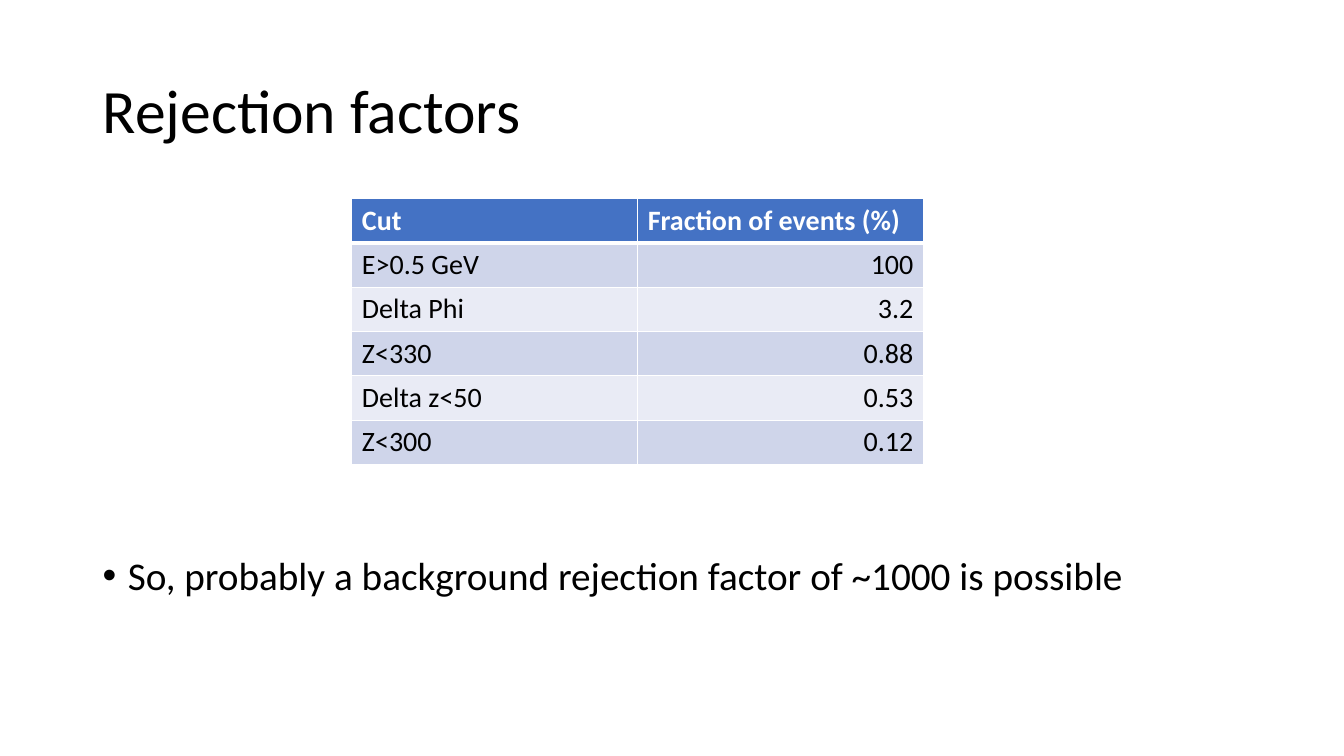
from dataclasses import dataclass

from lxml.etree import SubElement
from pptx import Presentation
from pptx.dml.color import RGBColor
from pptx.enum.text import MSO_ANCHOR, PP_ALIGN
from pptx.oxml import parse_xml
from pptx.oxml.ns import qn
from pptx.util import Inches, Pt

FONT = "Calibri"
COLORS = {
    "ink": "000000",
    "white": "FFFFFF",
    "head": "4472C4",
    "odd": "CFD5EA",
    "even": "E9EBF5",
}
NS = "http://schemas.openxmlformats.org/drawingml/2006/main"


@dataclass
class Cut:
    name: str
    share: str


@dataclass
class Box:
    left: float
    top: float
    width: float
    height: float


HEAD = Cut("Cut", "Fraction of events (%)")
CUTS = [
    Cut("E>0.5 GeV", "100"),
    Cut("Delta Phi", "3.2"),
    Cut("Z<330", "0.88"),
    Cut("Delta z<50", "0.53"),
    Cut("Z<300", "0.12"),
]


def write(frame, text: str, *, size: float, color: str = "ink",
          bold: bool = False, align=PP_ALIGN.LEFT, anchor=MSO_ANCHOR.TOP,
          leading: float = 1.0, before: float = 0, bullet: str = ""):
    frame.word_wrap = True
    frame.vertical_anchor = anchor
    para = frame.paragraphs[0]
    para.alignment = align
    para.line_spacing = leading
    para.space_before = Pt(before)
    if bullet:
        props = para._p.get_or_add_pPr()
        props.set("marL", str(Inches(0.25)))
        props.set("indent", str(-Inches(0.25)))
        SubElement(props, qn("a:buFont"), typeface="Arial")
        SubElement(props, qn("a:buChar"), char=bullet)
    run = para.add_run()
    run.text = text
    font = run.font
    font.name = FONT
    font.size = Pt(size)
    font.bold = bold
    font.color.rgb = RGBColor.from_string(COLORS[color])


def place(slide, box: Box, text: str, **style) -> None:
    shape = slide.shapes.add_textbox(
        Inches(box.left), Inches(box.top), Inches(box.width), Inches(box.height))
    write(shape.text_frame, text, **style)


def border(cell, base: float) -> None:
    props = cell._tc.get_or_add_tcPr()
    widths = {"lnL": 1, "lnR": 1, "lnT": 1, "lnB": base}
    for spot, (side, width) in enumerate(widths.items()):
        props.insert(spot, parse_xml(
            f'<a:{side} xmlns:a="{NS}" w="{Pt(width)}"><a:solidFill>'
            f'<a:srgbClr val="{COLORS["white"]}"/></a:solidFill></a:{side}>'))


def tabulate(slide, box: Box, cuts: list[Cut]) -> None:
    rows = [HEAD, *cuts]
    table = slide.shapes.add_table(
        len(rows), 2, Inches(box.left), Inches(box.top),
        Inches(box.width), Inches(box.height)).table
    for row, cut in enumerate(rows):
        head = row == 0
        fill = "head" if head else "odd" if row % 2 else "even"
        for col, text in enumerate((cut.name, cut.share)):
            cell = table.cell(row, col)
            cell.fill.solid()
            cell.fill.fore_color.rgb = RGBColor.from_string(COLORS[fill])
            border(cell, 3 if head else 1)
            right = col == 1 and not head
            write(cell.text_frame, text, size=20, bold=head,
                  color="white" if head else "ink",
                  align=PP_ALIGN.RIGHT if right else PP_ALIGN.LEFT)


def main() -> None:
    deck = Presentation()
    deck.slide_width = Inches(13.33)
    deck.slide_height = Inches(7.5)
    slide = deck.slides.add_slide(deck.slide_layouts[6])
    place(slide, Box(0.92, 0.4, 11.5, 1.45), "Rejection factors",
          size=44, anchor=MSO_ANCHOR.MIDDLE, leading=0.9)
    place(slide, Box(0.92, 5.47, 11.5, 1.28),
          "So, probably a background rejection factor of ~1000 is possible",
          size=28, leading=0.9, before=10, bullet="•")
    tabulate(slide, Box(3.49, 1.97, 5.67, 2.64), CUTS)
    deck.save("out.pptx")


if __name__ == "__main__":
    main()
